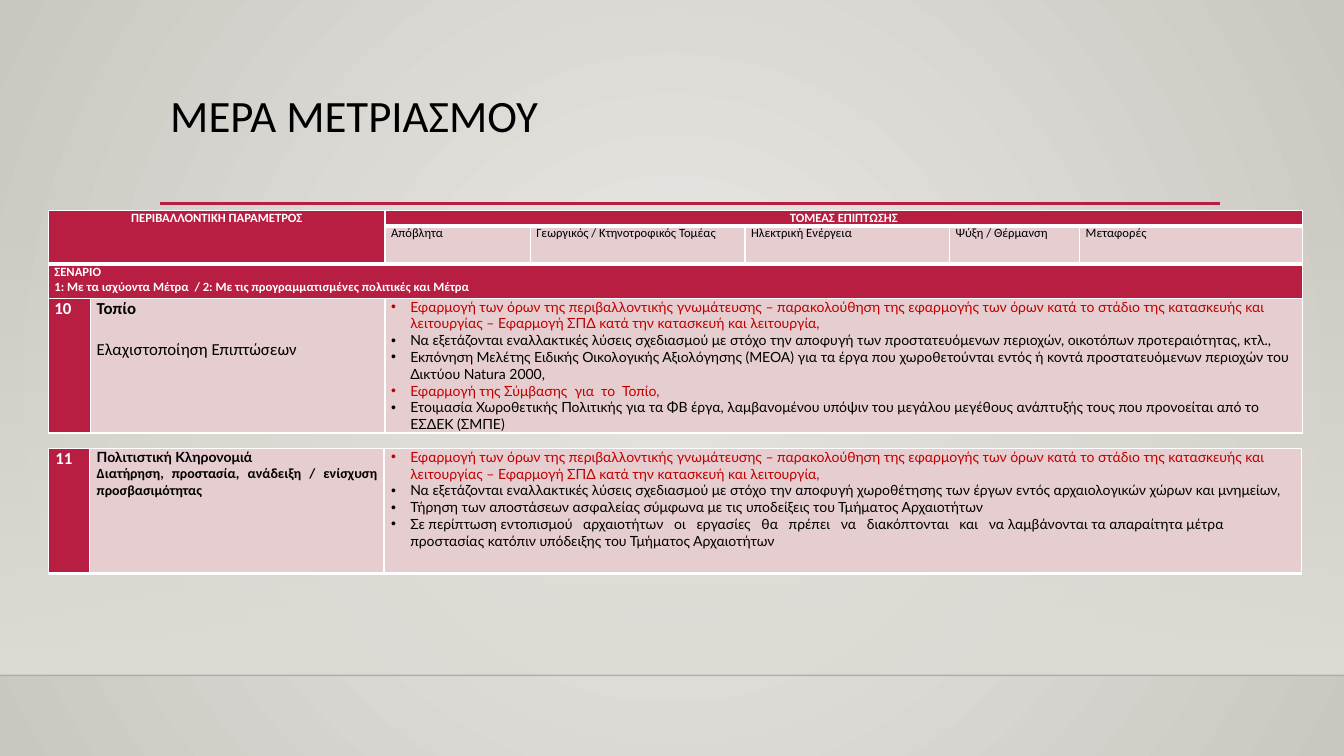
import pptx
import pptx.dml.color
import pptx.enum.shapes
import pptx.enum.text
import pptx.oxml
import pptx.oxml.ns
import pptx.util
from dataclasses import dataclass

Inches, Pt = pptx.util.Inches, pptx.util.Pt
RGB = pptx.dml.color.RGBColor.from_string
ALIGN = pptx.enum.text.PP_ALIGN
qn = pptx.oxml.ns.qn
NS = pptx.oxml.ns.nsdecls("a")


@dataclass(frozen=True)
class Theme:
    crimson: str = "B71E42"
    pink: str = "E6CDCF"
    red: str = "C00000"
    black: str = "000000"
    white: str = "FFFFFF"
    floor: str = "DFDBD5"
    floor_edge: str = "000001"
    backdrop: tuple = ("ECEAE7", "CAC7C1")
    heading: str = "Calibri"
    body: str = "Lato"
    title_size: int = 32
    label_size: int = 12
    body_size: int = 10
    small_size: int = 9


T = Theme()


def text_style(size, color, bold=False, name=T.heading, align=ALIGN.JUSTIFY, **extra):
    return {"font": {"size": Pt(size), "bold": bold, "name": name},
            "color": color, "paragraph": {"alignment": align, **extra}}


STYLES = {
    "title": text_style(T.title_size, T.black, align=ALIGN.LEFT, line_spacing=0.9),
    "header": text_style(T.small_size, T.white, True, align=ALIGN.CENTER),
    "sector": text_style(T.small_size, T.black),
    "scenario": text_style(T.small_size, T.white, True),
    "number": text_style(T.label_size, T.white, True),
    "topic": text_style(T.label_size, T.black, True),
    "aim": text_style(T.label_size, T.black, space_before=Pt(14.6)),
    "heritage": text_style(T.body_size, T.black, True, T.body),
    "heritage aim": text_style(T.body_size, T.black, True),
    "measure": text_style(T.body_size, T.black, False, T.body, ALIGN.LEFT),
    "key measure": text_style(T.body_size, T.red, False, T.body, ALIGN.LEFT),
}

SECTORS = ["Απόβλητα", "Γεωργικός / Κτηνοτροφικός Τομέας", "Ηλεκτρική Ενέργεια",
           "Ψύξη / Θέρμανση", "Μεταφορές"]
PERMIT_TERMS = ("key measure", "Εφαρμογή των όρων της περιβαλλοντικής γνωμάτευσης – παρακολούθηση της εφαρμογής των όρων κατά το στάδιο της κατασκευής και λειτουργίας – Εφαρμογή ΣΠΔ κατά την κατασκευή και λειτουργία,")
LANDSCAPE_MEASURES = [
    PERMIT_TERMS,
    ("measure", "Να εξετάζονται εναλλακτικές λύσεις σχεδιασμού με στόχο την αποφυγή των προστατευόμενων περιοχών, οικοτόπων προτεραιότητας, κτλ.,"),
    ("measure", "Εκπόνηση Μελέτης Ειδικής Οικολογικής Αξιολόγησης (ΜΕΟΑ) για τα έργα που χωροθετούνται εντός ή κοντά προστατευόμενων περιοχών του Δικτύου Natura 2000,"),
    ("key measure", "Εφαρμογή της Σύμβασης  για  το  Τοπίο,"),
    ("measure", "Ετοιμασία Χωροθετικής Πολιτικής για τα ΦΒ έργα, λαμβανομένου υπόψιν του μεγάλου μεγέθους ανάπτυξής τους που προνοείται από το ΕΣΔΕΚ (ΣΜΠΕ)"),
]
HERITAGE_MEASURES = [
    PERMIT_TERMS,
    ("measure", "Να εξετάζονται εναλλακτικές λύσεις σχεδιασμού με στόχο την αποφυγή χωροθέτησης των έργων εντός αρχαιολογικών χώρων και μνημείων,"),
    ("measure", "Τήρηση των αποστάσεων ασφαλείας σύμφωνα με τις υποδείξεις του Τμήματος Αρχαιοτήτων"),
    ("measure", "Σε περίπτωση εντοπισμού   αρχαιοτήτων   οι   εργασίες   θα   πρέπει   να   διακόπτονται   και   να λαμβάνονται τα απαραίτητα μέτρα προστασίας κατόπιν υπόδειξης του Τμήματος Αρχαιοτήτων"),
]

# Each cell: row, column, rows spanned, columns spanned, fill, bottom border, paragraphs
LANDSCAPE_CELLS = [
    (0, 0, 2, 2, T.crimson, 3, [("header", "ΠΕΡΙΒΑΛΛΟΝΤΙΚΗ ΠΑΡΑΜΕΤΡΟΣ")]),
    (0, 2, 1, 5, T.crimson, 3, [("header", "ΤΟΜΕΑΣ ΕΠΙΠΤΩΣΗΣ")]),
    *[(1, column, 1, 1, T.pink, 3, [("sector", sector)])
      for column, sector in enumerate(SECTORS, 2)],
    (2, 0, 1, 7, T.crimson, 1, [
        ("scenario", "ΣΕΝΑΡΙΟ"),
        ("scenario", "1: Με τα ισχύοντα Μέτρα  / 2: Με τις προγραμματισμένες πολιτικές και Μέτρα")]),
    (3, 0, 1, 1, T.crimson, 1, [("number", "10")]),
    (3, 1, 1, 1, T.pink, 1, [("topic", "Τοπίο"), ("aim", "Ελαχιστοποίηση Επιπτώσεων")]),
    (3, 2, 1, 5, T.pink, 1, LANDSCAPE_MEASURES),
]
HERITAGE_CELLS = [
    (0, 0, 1, 1, T.crimson, 3, [("number", "11")]),
    (0, 1, 1, 1, T.pink, 3, [
        ("heritage", "Πολιτιστική Κληρονομιά"),
        ("heritage aim", "Διατήρηση, προστασία, ανάδειξη / ενίσχυση προσβασιμότητας")]),
    (0, 2, 1, 1, T.pink, 3, HERITAGE_MEASURES),
]


def write(frame, paragraphs):
    for index, (style_name, text) in enumerate(paragraphs):
        paragraph = frame.add_paragraph() if index else frame.paragraphs[0]
        style = STYLES[style_name]
        if "measure" in style_name:
            properties = paragraph._p.get_or_add_pPr()
            properties.set("marL", str(Inches(0.24 - 0.05)))
            properties.set("indent", str(-Inches(0.19)))
            properties.append(pptx.oxml.parse_xml(f'<a:buFont {NS} typeface="Arial"/>'))
            properties.append(pptx.oxml.parse_xml(f'<a:buChar {NS} char="•"/>'))
        for name, value in style["paragraph"].items():
            setattr(paragraph, name, value)
        run = paragraph.add_run()
        run.text = text
        for name, value in style["font"].items():
            setattr(run.font, name, value)
        run.font.color.rgb = RGB(style["color"])


def set_alpha(color_element, percent):
    color_element.append(pptx.oxml.parse_xml(f'<a:alpha {NS} val="{percent * 1000}"/>'))


def add_rule(slide, left, right, top, color, width):
    """Draw a horizontal line without a shadow."""
    rule = slide.shapes.add_connector(
        pptx.enum.shapes.MSO_CONNECTOR.STRAIGHT,
        Inches(left), Inches(top), Inches(right), Inches(top))
    rule.line.color.rgb = RGB(color)
    rule.line.width = Pt(width)
    rule._element.spPr.append(pptx.oxml.parse_xml(f"<a:effectLst {NS}/>"))
    return rule


def add_backdrop(slide, width, top, height):
    fill = slide.background.fill
    fill.gradient()
    for stop, color in zip(fill.gradient_stops, T.backdrop):
        stop.color.rgb = RGB(color)
    gradient = next(slide.element.iter(qn("a:gradFill")))
    gradient.replace(gradient.find(qn("a:lin")), pptx.oxml.parse_xml(
        f'<a:path {NS} path="circle">'
        '<a:fillToRect l="50000" t="50000" r="50000" b="50000"/></a:path>'))

    floor = slide.shapes.add_shape(
        pptx.enum.shapes.MSO_SHAPE.RECTANGLE, 0, Inches(top), Inches(width), Inches(height))
    floor.shadow.inherit = False
    floor.line.fill.background()
    floor.fill.gradient()
    floor.fill.gradient_angle = 270
    for stop in floor.fill.gradient_stops:
        stop.color.rgb = RGB(T.floor)
    set_alpha(next(floor._element.spPr.iter(qn("a:srgbClr"))), 0)

    edge = add_rule(slide, 0, width, top + height, T.floor_edge, 1)
    set_alpha(next(edge._element.spPr.iter(qn("a:srgbClr"))), 20)


def add_title(slide, left, top, width, height):
    title = slide.shapes.add_textbox(Inches(left), Inches(top), Inches(width), Inches(height))
    title.text_frame.word_wrap = True
    write(title.text_frame, [("title", "ΜΕΡΑ ΜΕΤΡΙΑΣΜΟΥ")])
    add_rule(slide, left, left + width + 0.01, top + 1.14, T.crimson, 2.5)


def style_cell(cell, fill, bottom, inset):
    margins = {"margin_left": inset, "margin_right": inset, "margin_top": 0, "margin_bottom": 0}
    for name, value in margins.items():
        setattr(cell, name, Inches(value))
    properties = cell._tc.get_or_add_tcPr()
    for side, width in {"L": 1, "R": 1, "T": 1, "B": bottom}.items():
        properties.append(pptx.oxml.parse_xml(
            f'<a:ln{side} {NS} w="{Pt(width)}"><a:solidFill><a:srgbClr val="{T.white}"/>'
            f"</a:solidFill></a:ln{side}>"))
    cell.fill.solid()
    cell.fill.fore_color.rgb = RGB(fill)


def add_measures_table(slide, left, top, columns, rows, cells, inset):
    table = slide.shapes.add_table(
        len(rows), len(columns), Inches(left), Inches(top),
        Inches(sum(columns)), Inches(sum(rows))).table
    table.first_row = table.horz_banding = False
    for column, width in zip(table.columns, columns):
        column.width = Inches(width)
    for row, height in zip(table.rows, rows):
        row.height = Inches(height)
    for row, column, row_span, column_span, fill, bottom, paragraphs in cells:
        last_row, last_column = row + row_span - 1, column + column_span - 1
        for r in range(row, last_row + 1):
            for c in range(column, last_column + 1):
                style_cell(table.cell(r, c), fill, bottom, inset)
        cell = table.cell(row, column)
        if row_span * column_span > 1:
            cell.merge(table.cell(last_row, last_column))
        write(cell.text_frame, paragraphs)


def main():
    deck = pptx.Presentation()
    deck.slide_width, deck.slide_height = Inches(13.33), Inches(7.5)
    slide = deck.slides.add_slide(deck.slide_layouts[6])
    add_backdrop(slide, 13.33, 2.21, 4.49)
    add_title(slide, 1.59, 0.88, 10.5, 1.15)
    add_measures_table(slide, 0.48, 2.09, [0.42, 2.92, 1.44, 2.13, 2.03, 1.29, 2.21],
                       [0.15, 0.38, 0.34, 1.25], LANDSCAPE_CELLS, 0.06)
    add_measures_table(slide, 0.48, 4.45, [0.41, 2.92, 9.1], [1.24], HERITAGE_CELLS, 0.07)
    deck.save("out.pptx")


if __name__ == "__main__":
    main()
